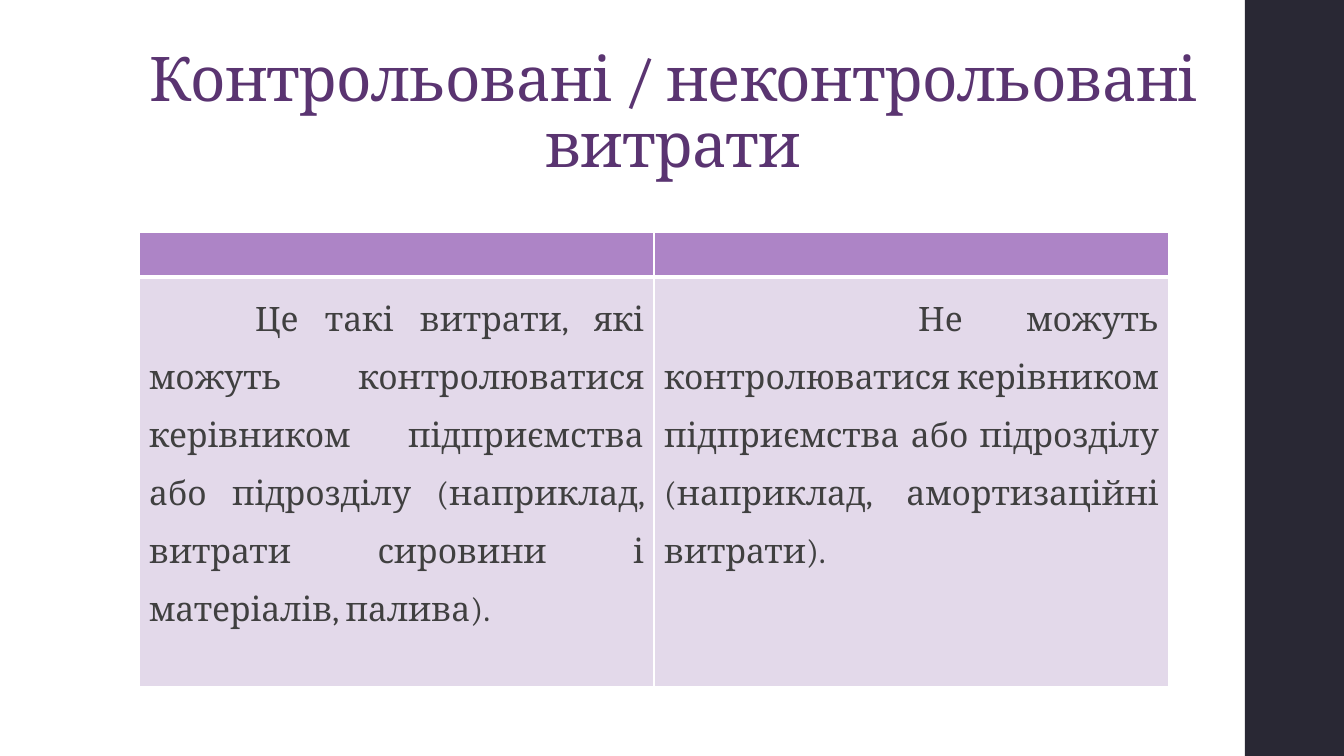
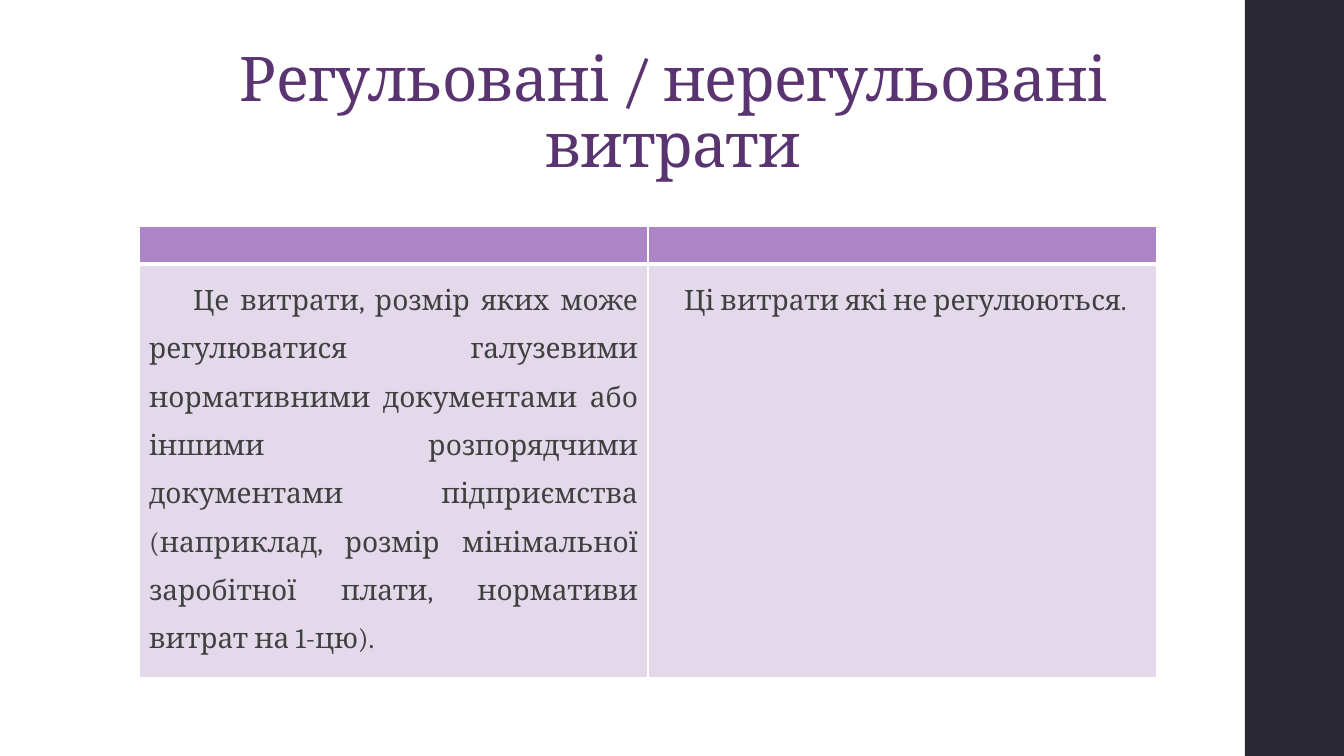
from lxml.etree import SubElement
from pptx import Presentation
from pptx.dml.color import RGBColor
from pptx.enum.shapes import MSO_SHAPE
from pptx.enum.text import MSO_ANCHOR, PP_ALIGN
from pptx.oxml.ns import qn
from pptx.util import Emu, Pt

SLIDE_WIDTH, SLIDE_HEIGHT = 1344, 756
BAND_LEFT = 1245
CONTENT_LEFT = 139
FONT = "Cambria"
WHITE = "FFFFFF"
BAND_COLOR = "292834"
TITLE_COLOR = "5A3471"
TEXT_COLOR = "404040"
HEADER_FILL = "AD84C6"
BODY_FILL = "E3D9EA"

SLIDES = [
    {
        "title": "Контрольовані / неконтрольовані витрати",
        "top": 232,
        "column": 515,
        "rows": (45, 410),
        "size": 24,
        "cells": [
            ("Це такі витрати, які можуть контролюватися керівником "
             "підприємства або підрозділу (наприклад, витрати сировини "
             "і матеріалів, палива).", 106),
            ("Не можуть контролюватися керівником підприємства або "
             "підрозділу (наприклад, амортизаційні витрати).", 254),
        ],
    },
    {
        "title": "Регульовані / нерегульовані витрати",
        "top": 226,
        "column": 509,
        "rows": (38, 391),
        "size": 20,
        "cells": [
            ("Це витрати, розмір яких може регулюватися галузевими "
             "нормативними документами або іншими розпорядчими документами "
             "підприємства (наприклад, розмір мінімальної заробітної плати, "
             "нормативи витрат на 1-цю).", 44),
            ("Ці витрати які не регулюються.", 26),
        ],
    },
]


def px(length):
    return Emu(round(length * 12192000 / SLIDE_WIDTH))


def color(value):
    return RGBColor.from_string(value)


def paint(target, value):
    target.fill.solid()
    target.fill.fore_color.rgb = color(value)


def write(paragraph, text, size, text_color, alignment, line_spacing):
    paragraph.text = text
    paragraph.alignment = alignment
    paragraph.line_spacing = line_spacing
    font = paragraph.runs[0].font
    font.name = FONT
    font.size = Pt(size)
    font.color.rgb = color(text_color)


def add_band(slide):
    band = slide.shapes.add_shape(
        MSO_SHAPE.RECTANGLE, px(BAND_LEFT), 0,
        px(SLIDE_WIDTH - BAND_LEFT), px(SLIDE_HEIGHT))
    band.shadow.inherit = False
    paint(band, BAND_COLOR)
    band.line.fill.background()


def add_title(slide, text):
    box = slide.shapes.add_textbox(px(CONTENT_LEFT), px(40), px(1068), px(146))
    frame = box.text_frame
    frame.word_wrap = True
    frame.vertical_anchor = MSO_ANCHOR.BOTTOM
    frame.margin_left = frame.margin_right = px(5)
    paragraph = frame.paragraphs[0]
    write(paragraph, text, 44, TITLE_COLOR, PP_ALIGN.CENTER, 0.9)
    paragraph.runs[0].font._element.set("spc", "-50")


def set_borders(cell, top, bottom):
    properties = cell._tc.get_or_add_tcPr()
    for side, width in (("L", 1), ("R", 1), ("T", top), ("B", bottom)):
        line = SubElement(properties, qn(f"a:ln{side}"), w=str(Pt(width)))
        fill = SubElement(line, qn("a:solidFill"))
        SubElement(fill, qn("a:srgbClr"), val=WHITE)


def style_header_cell(cell):
    set_borders(cell, 1, 3)
    paint(cell, HEADER_FILL)
    cell.margin_top = cell.margin_bottom = 0


def fill_body_cell(cell, text, indent, size):
    set_borders(cell, 3, 1)
    paint(cell, BODY_FILL)
    paragraph = cell.text_frame.paragraphs[0]
    write(paragraph, text, size, TEXT_COLOR, PP_ALIGN.JUSTIFY, 1.5)
    paragraph._p.get_or_add_pPr().set("indent", str(px(indent)))


def add_cost_table(slide, content):
    cells = content["cells"]
    heights = content["rows"]
    table = slide.shapes.add_table(
        len(heights), len(cells), px(CONTENT_LEFT), px(content["top"]),
        px(content["column"] * len(cells)), px(sum(heights))).table
    for row, height in zip(table.rows, heights):
        row.height = px(height)
    for index, (text, indent) in enumerate(cells):
        table.columns[index].width = px(content["column"])
        style_header_cell(table.cell(0, index))
        fill_body_cell(table.cell(1, index), text, indent, content["size"])


def main():
    presentation = Presentation()
    presentation.slide_width = px(SLIDE_WIDTH)
    presentation.slide_height = px(SLIDE_HEIGHT)
    for content in SLIDES:
        slide = presentation.slides.add_slide(presentation.slide_layouts[6])
        add_band(slide)
        add_title(slide, content["title"])
        add_cost_table(slide, content)
    presentation.save("out.pptx")


if __name__ == "__main__":
    main()
